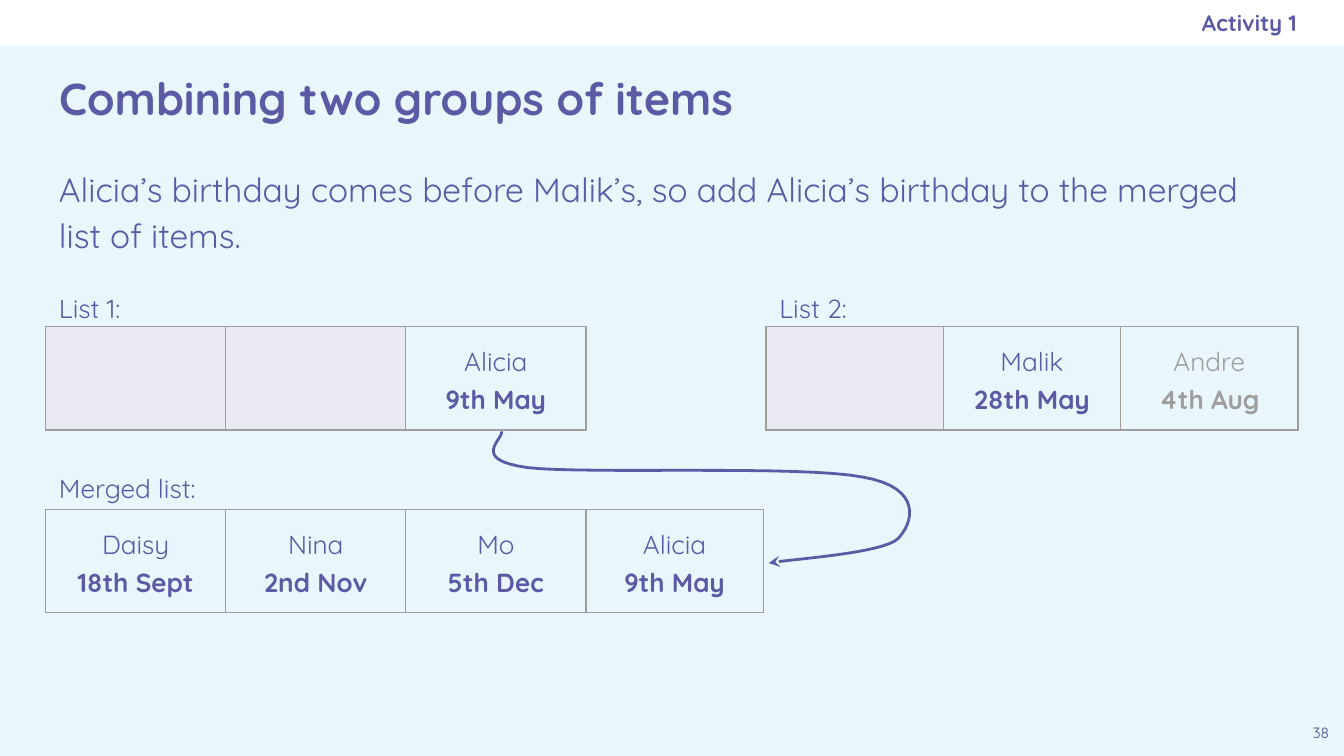
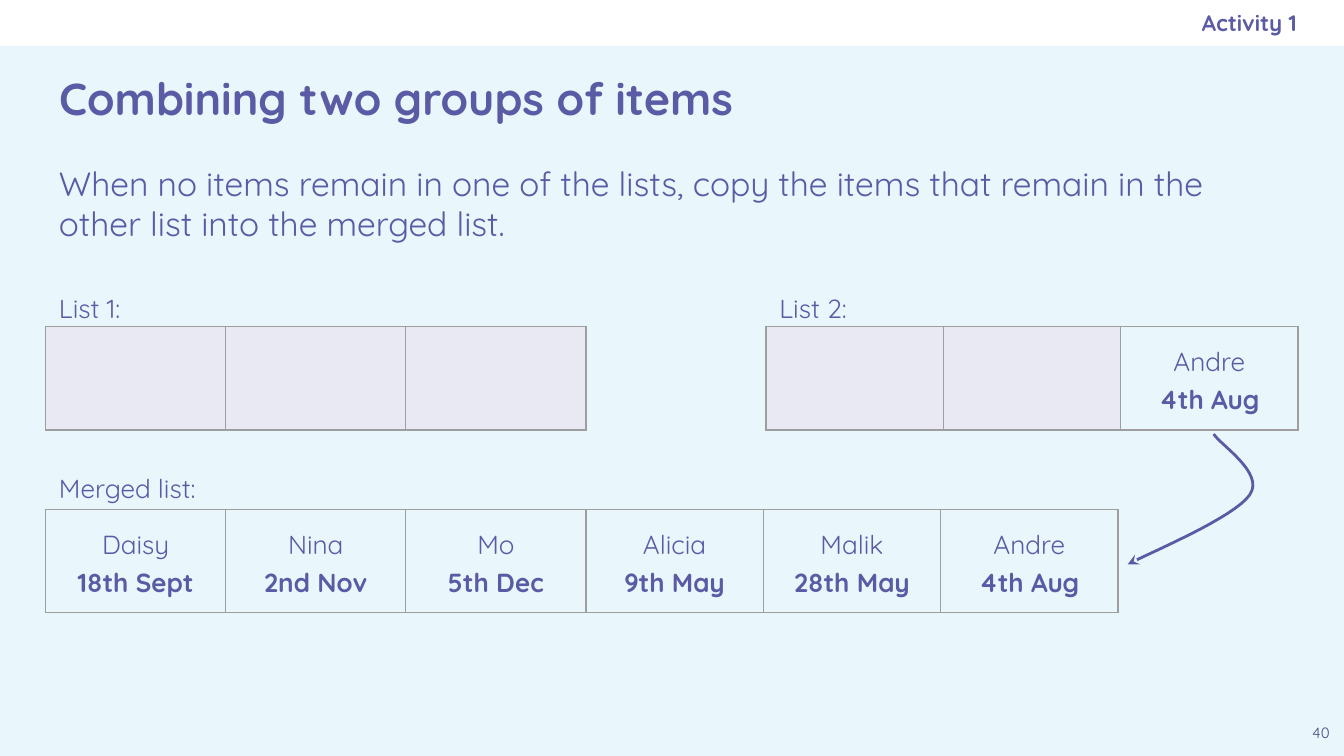
import pptx
import pptx.util
import pptx.dml.color
import pptx.enum.shapes
import pptx.enum.text
import pptx.oxml
import lxml.etree

Inches, Pt = pptx.util.Inches, pptx.util.Pt
RGB = pptx.dml.color.RGBColor.from_string
ALIGN = pptx.enum.text.PP_ALIGN
ANCHOR = pptx.enum.text.MSO_ANCHOR
NS = "http://schemas.openxmlformats.org/drawingml/2006/main"

C = {"sky": "E9F7FC", "white": "FFFFFF", "violet": "5B5BA5",
     "number": "494985", "used": "E9E9F3", "grey": "9E9E9E"}
FONT = "Quicksand"
W = 10
H = W * 9 / 16
M = 0.34
FULL = W - 2 * M
WIDE, NARROW = 1.34, 1.32
ROW = 0.77
LIST_Y, MERGED_Y = 2.43, 3.79
USED, GAP = "used", "gap"

DAISY = ("Daisy", "18th Sept", "violet")
NINA = ("Nina", "2nd Nov", "violet")
MO = ("Mo", "5th Dec", "violet")
ALICIA = ("Alicia", "9th May", "violet")
MALIK = ("Malik", "28th May", "violet")
ANDRE = ("Andre", "4th Aug", "violet")
ANDRE_LATER = ("Andre", "4th Aug", "grey")

SLIDES = [
    {"number": "38",
     "body": "Alicia’s birthday comes before Malik’s, so add Alicia’s birthday to the merged list of items.",
     "spacing": 1.15,
     "lists": [USED, USED, ALICIA, GAP, USED, MALIK, ANDRE_LATER],
     "merged": [DAISY, NINA, MO, ALICIA],
     "curve": [(3.73, 3.21), (3.76, 3.26), (3.48, 3.42), (3.93, 3.48),
               (4.38, 3.53), (5.96, 3.46), (6.42, 3.55),
               (6.88, 3.63), (6.79, 3.9), (6.68, 4.01),
               (6.56, 4.12), (5.88, 4.16), (5.72, 4.19)]},
    {"number": "40",
     "body": "When no items remain in one of the lists, copy the items that remain in the other list into the merged list.",
     "spacing": 1.0,
     "lists": [USED, USED, USED, GAP, USED, USED, ANDRE],
     "merged": [DAISY, NINA, MO, ALICIA, MALIK, ANDRE],
     "curve": [(9.03, 3.23), (9.08, 3.31), (9.41, 3.52), (9.3, 3.68),
               (9.19, 3.85), (8.54, 4.12), (8.39, 4.2)]},
]


def style(p, size, color="violet", bold=False, align=ALIGN.LEFT, spacing=1.0):
    p.alignment = align
    p.line_spacing = spacing
    for r in p.runs:
        r.font.name = FONT
        r.font.size = Pt(size)
        r.font.bold = bold
        r.font.color.rgb = RGB(C[color])


def set_text(sp, box, text, size, anchor=ANCHOR.TOP, right=0.1, **look):
    sp.left, sp.top, sp.width, sp.height = [Inches(v) for v in box]
    tf = sp.text_frame
    tf.text = text
    tf.word_wrap = True
    tf.auto_size = pptx.enum.text.MSO_AUTO_SIZE.NONE
    tf.vertical_anchor = anchor
    tf.margin_left = tf.margin_top = tf.margin_bottom = Inches(0.1)
    tf.margin_right = Inches(right)
    style(tf.paragraphs[0], size, **look)


prs = pptx.Presentation()
prs.slide_width, prs.slide_height = Inches(W), Inches(H)
bg = prs.slide_master.background.fill
bg.solid()
bg.fore_color.rgb = RGB(C["sky"])

for data in SLIDES:
    s = prs.slides.add_slide(prs.slide_layouts[5])
    band = s.shapes.add_shape(pptx.enum.shapes.MSO_SHAPE.RECTANGLE, 0, 0, Inches(W), Inches(M))
    band.shadow.inherit = False
    band.fill.solid()
    band.fill.fore_color.rgb = RGB(C["white"])
    band.line.fill.background()

    set_text(s.shapes.title, (M, M, FULL, ROW), "Combining two groups of items", 24,
             anchor=ANCHOR.MIDDLE, bold=True)

    for text, box, size, look in [
        ("Activity 1", (5.75, 0, 3.9, M), 12,
         {"anchor": ANCHOR.MIDDLE, "right": 0, "bold": True, "align": ALIGN.RIGHT}),
        (data["number"], (W - M, H - M, M, M), 8, {"color": "number", "align": ALIGN.CENTER}),
        (data["body"], (M, M + ROW, FULL, 0.92), 18, {"spacing": data["spacing"]}),
        ("List 1:", (M, 2.04, 1.4, 0.42), 14, {"spacing": 1.15}),
        ("List 2:", (M + 4 * WIDE, 2.04, 1.4, 0.42), 14, {"spacing": 1.15}),
        ("Merged list:", (M, 3.38, 1.4, 0.42), 14, {"spacing": 1.15}),
    ]:
        set_text(s.shapes.add_textbox(0, 0, 0, 0), box, text, size, **look)

    for items, top, wide_count in [(data["lists"], LIST_Y, 4), (data["merged"], MERGED_Y, 3)]:
        widths = [WIDE if i < wide_count else NARROW for i in range(len(items))]
        table = s.shapes.add_table(1, len(items), Inches(M), Inches(top),
                                   Inches(sum(widths)), Inches(ROW)).table
        table.first_row = table.horz_banding = False
        table.rows[0].height = Inches(ROW)
        for i, item in enumerate(items):
            table.columns[i].width = Inches(widths[i])
            cell = table.cell(0, i)
            cell.vertical_anchor = ANCHOR.MIDDLE
            cell.margin_left = cell.margin_right = Inches(0.1)
            cell.margin_top = cell.margin_bottom = Inches(0.1)
            tcPr = cell._tc.get_or_add_tcPr()
            for side in "LRTB":
                fill = ("<a:noFill/>" if item == GAP and side in "TB" else
                        f'<a:solidFill><a:srgbClr val="{C["grey"]}"/></a:solidFill>')
                tcPr.append(pptx.oxml.parse_xml(
                    f'<a:ln{side} xmlns:a="{NS}" w="{Pt(0.75)}">{fill}</a:ln{side}>'))
            if item == USED:
                cell.fill.solid()
                cell.fill.fore_color.rgb = RGB(C["used"])
            else:
                cell.fill.background()
            if item not in (USED, GAP):
                name, day, color = item
                cell.text_frame.text = f"{name}\n{day}"
                for p, bold in zip(cell.text_frame.paragraphs, (False, True)):
                    style(p, 14, color, bold, ALIGN.CENTER, 1.15)

    curve = [(Inches(x), Inches(y)) for x, y in data["curve"]]
    points = []
    for i in range(0, len(curve) - 1, 3):
        for step in range(1, 17):
            t = step / 16
            weights = [(1 - t) ** 3, 3 * t * (1 - t) ** 2, 3 * t ** 2 * (1 - t), t ** 3]
            points.append([sum(w * pt[axis] for w, pt in zip(weights, curve[i:i + 4]))
                           for axis in (0, 1)])
    fb = s.shapes.build_freeform(*curve[0])
    fb.add_line_segments(points, close=False)
    arrow = fb.convert_to_shape()
    arrow.shadow.inherit = False
    arrow.fill.background()
    arrow.line.color.rgb = RGB(C["violet"])
    arrow.line.width = Pt(1.5)
    lxml.etree.SubElement(arrow.line._get_or_add_ln(), f"{{{NS}}}tailEnd", type="stealth")

prs.save("out.pptx")
